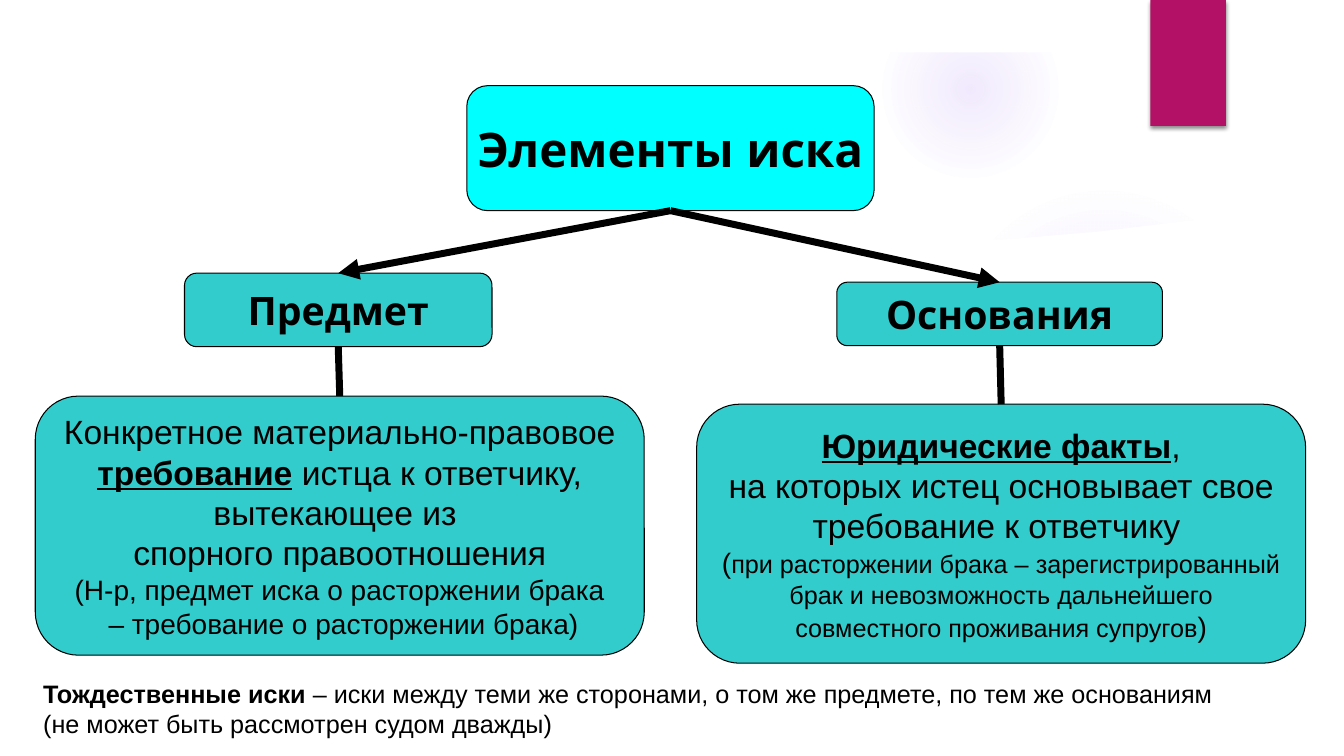
import pptx
import pptx.util
import pptx.dml.color
import pptx.enum.shapes
import pptx.enum.text
import pptx.oxml
from dataclasses import dataclass

PX = 9144


@dataclass(frozen=True)
class Theme:
    white: str = "FFFFFF"
    black: str = "000000"
    accent: str = "B31166"
    glow: str = "9B6BF2"
    root: str = "00FFFF"
    node: str = "33CCCC"
    display: str = "League Spartan"
    body: str = "Arial"
    title: int = 34
    heading: int = 28
    large: int = 24
    medium: int = 20
    small: int = 18
    outline: float = 0.75
    link: int = 5


THEME = Theme()
LARGE, MEDIUM, SMALL = THEME.large, THEME.medium, THEME.small

SLIDE = (1333, 750)
TITLE = ("Элементы иска", (463, 85, 404, 124))
BRANCHES = [
    {
        "heading": "Предмет",
        "heading_at": (183, 271, 305, 73),
        "detail_at": (35, 393, 604, 257),
        "detail": [
            [("Конкретное материально-правовое", LARGE, "")],
            [("требование", LARGE, "bu"), (" истца к ответчику,", LARGE, "")],
            [("вытекающее из ", LARGE, "")],
            [("спорного правоотношения", LARGE, "")],
            [("(Н-р, предмет иска о расторжении брака", MEDIUM, "")],
            [(" – требование о расторжении брака)", MEDIUM, "")],
        ],
    },
    {
        "heading": "Основания",
        "heading_at": (830, 280, 323, 63),
        "detail_at": (691, 401, 604, 257),
        "detail": [
            [("Юридические факты", LARGE, "bu"), (",", LARGE, "")],
            [("на которых истец основывает свое", LARGE, "")],
            [("требование к ответчику ", LARGE, "")],
            [("(", MEDIUM, ""), ("при расторжении брака – зарегистрированный", SMALL, "")],
            [("брак и невозможность дальнейшего", SMALL, "")],
            [("совместного проживания супругов", SMALL, ""), (")", MEDIUM, "")],
        ],
    },
]
FOOTNOTE_AT = (33, 668, 1242, 70)
FOOTNOTE = [
    [("Тождественные иски", SMALL, "b"),
     (" – иски между теми же сторонами, о том же предмете, по тем же основаниям", SMALL, "")],
    [("(не может быть рассмотрен судом дважды)", SMALL, "")],
]
GLOWS = [
    ((941, 183, 308, 308), [(0, 7), (36, 6), (69, 0)]),
    ((875, 1, 175, 175), [(0, 14), (36, 7), (73, 0)]),
]
TOP_MARGIN = (870, 0, 463, 52)
WAVE = [(900, 244), (1004, 237), (1088, 230), (1172, 220), (1256, 209),
        (1284, 204), (1284, 500), (900, 500)]
RIBBON = (1141, 0, 75, 125)

KIND = pptx.enum.shapes.MSO_SHAPE
ALIGN = pptx.enum.text.PP_ALIGN
BOTTOM_SITE, TOP_SITE = 2, 0


def color(value):
    return pptx.dml.color.RGBColor.from_string(value)


def emu(lengths):
    return [length * PX for length in lengths]


def element(tag, content="", attributes=""):
    namespace = pptx.oxml.ns.nsdecls("a")
    return pptx.oxml.parse_xml(f"<a:{tag} {namespace} {attributes}>{content}</a:{tag}>")


def paint(shape, fill, outlined=False):
    shape.shadow.inherit = False
    shape.fill.solid()
    shape.fill.fore_color.rgb = color(fill)
    if outlined:
        shape.line.color.rgb = color(THEME.black)
        shape.line.width = pptx.util.Pt(THEME.outline)
    else:
        shape.line.fill.background()


def add_box(page, kind, at, fill, outlined=False):
    box = page.shapes.add_shape(kind, *emu(at))
    paint(box, fill, outlined)
    return box


def write(shape, lines, font, align, wrap=False):
    frame = shape.text_frame
    frame.auto_size = pptx.enum.text.MSO_AUTO_SIZE.NONE
    frame.word_wrap = wrap
    frame.vertical_anchor = pptx.enum.text.MSO_ANCHOR.MIDDLE
    for index, line in enumerate(lines):
        para = frame.add_paragraph() if index else frame.paragraphs[0]
        para.alignment = align
        for text, size, style in line:
            span = para.add_run()
            span.text = text
            span.font.name = font
            span.font.size = pptx.util.Pt(size)
            span.font.bold = "b" in style
            span.font.underline = "u" in style
            span.font.color.rgb = color(THEME.black)


def add_glow(page, at, stops):
    glow = add_box(page, KIND.OVAL, at, THEME.glow)
    marks = "".join(
        f'<a:gs pos="{place * 1000}"><a:srgbClr val="{THEME.glow}">'
        f'<a:alpha val="{alpha * 1000}"/></a:srgbClr></a:gs>'
        for place, alpha in stops)
    gradient = element("gradFill", f'<a:gsLst>{marks}</a:gsLst><a:path path="circle">'
                       '<a:fillToRect l="50000" t="50000" r="50000" b="50000"/></a:path>')
    properties = glow._element.spPr
    properties.replace(properties.find(pptx.oxml.ns.qn("a:solidFill")), gradient)


def add_backdrop(page):
    for at, stops in GLOWS:
        add_glow(page, at, stops)
    builder = page.shapes.build_freeform(*WAVE[0], scale=PX)
    builder.add_line_segments(WAVE[1:], close=True)
    paint(builder.convert_to_shape(), THEME.white)
    add_box(page, KIND.RECTANGLE, TOP_MARGIN, THEME.white)
    ribbon = add_box(page, KIND.RECTANGLE, RIBBON, THEME.accent)
    shadow = element("effectLst", '<a:outerShdw blurRad="38100" dist="25400" dir="5400000">'
                     f'<a:srgbClr val="{THEME.black}"><a:alpha val="45000"/></a:srgbClr>'
                     '</a:outerShdw>')
    properties = ribbon._element.spPr
    properties.replace(properties.find(pptx.oxml.ns.qn("a:effectLst")), shadow)


def link(page, upper, lower, arrow=False):
    line = page.shapes.add_connector(pptx.enum.shapes.MSO_CONNECTOR.STRAIGHT, 0, 0, 0, 0)
    line.begin_connect(upper, BOTTOM_SITE)
    line.end_connect(lower, TOP_SITE)
    line.line.color.rgb = color(THEME.black)
    line.line.width = pptx.util.Pt(THEME.link)
    if arrow:
        line.line._get_or_add_ln().append(element("tailEnd", attributes='type="triangle"'))
    line._element.spPr.append(element("effectLst"))


def add_title(page):
    text, at = TITLE
    root = add_box(page, KIND.ROUNDED_RECTANGLE, at, THEME.root, True)
    title = page.shapes.title
    title.left, title.top, title.width, title.height = emu(at)
    write(title, [[(text, THEME.title, "b")]], THEME.display, ALIGN.CENTER)
    root._element.addnext(title._element)
    return root


def add_branch(page, root, branch):
    heading = add_box(page, KIND.ROUNDED_RECTANGLE, branch["heading_at"], THEME.node, True)
    write(heading, [[(branch["heading"], THEME.heading, "b")]], THEME.display, ALIGN.CENTER)
    detail = add_box(page, KIND.ROUNDED_RECTANGLE, branch["detail_at"], THEME.node, True)
    write(detail, branch["detail"], THEME.body, ALIGN.CENTER)
    link(page, root, heading, arrow=True)
    link(page, heading, detail)


def main():
    deck = pptx.Presentation()
    deck.slide_width, deck.slide_height = emu(SLIDE)
    page = deck.slides.add_slide(deck.slide_layouts.get_by_name("Title Only"))
    add_backdrop(page)
    root = add_title(page)
    for branch in BRANCHES:
        add_branch(page, root, branch)
    footnote = page.shapes.add_textbox(*emu(FOOTNOTE_AT))
    write(footnote, FOOTNOTE, THEME.body, ALIGN.JUSTIFY, wrap=True)
    deck.save("out.pptx")


if __name__ == "__main__":
    main()
